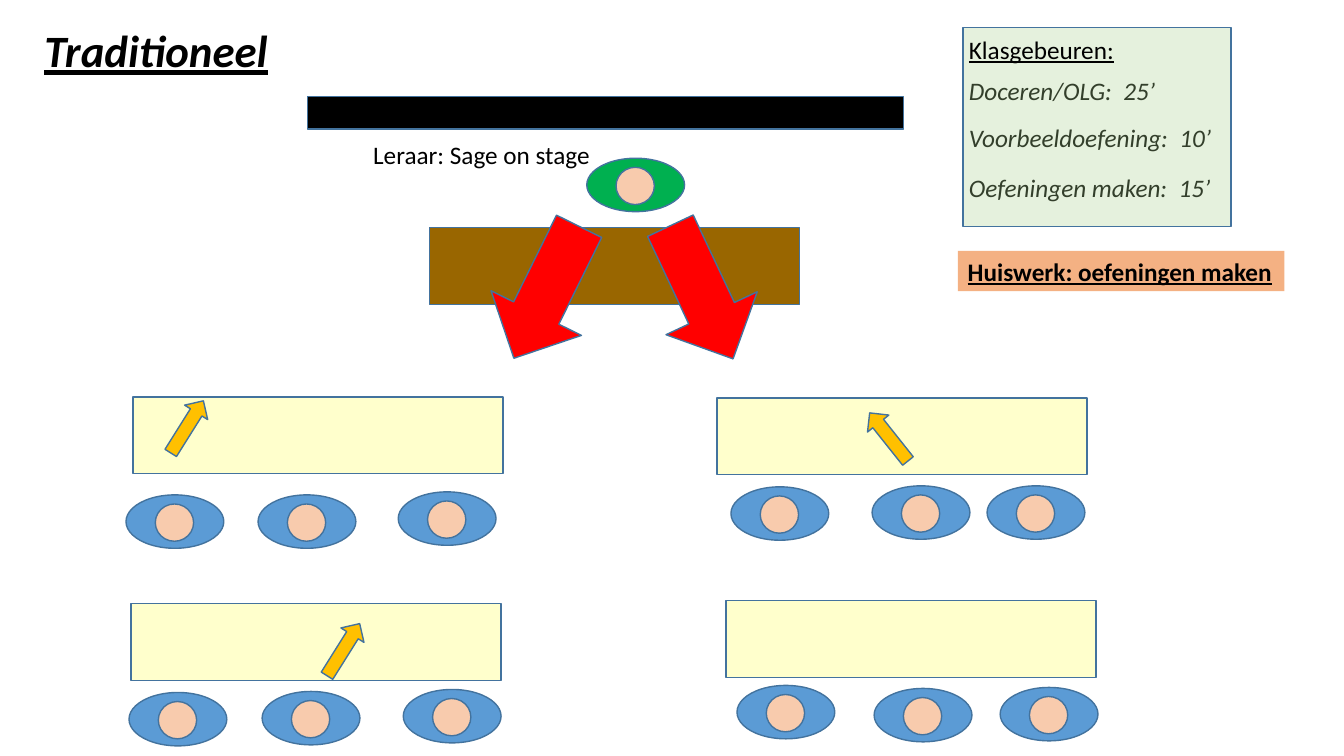
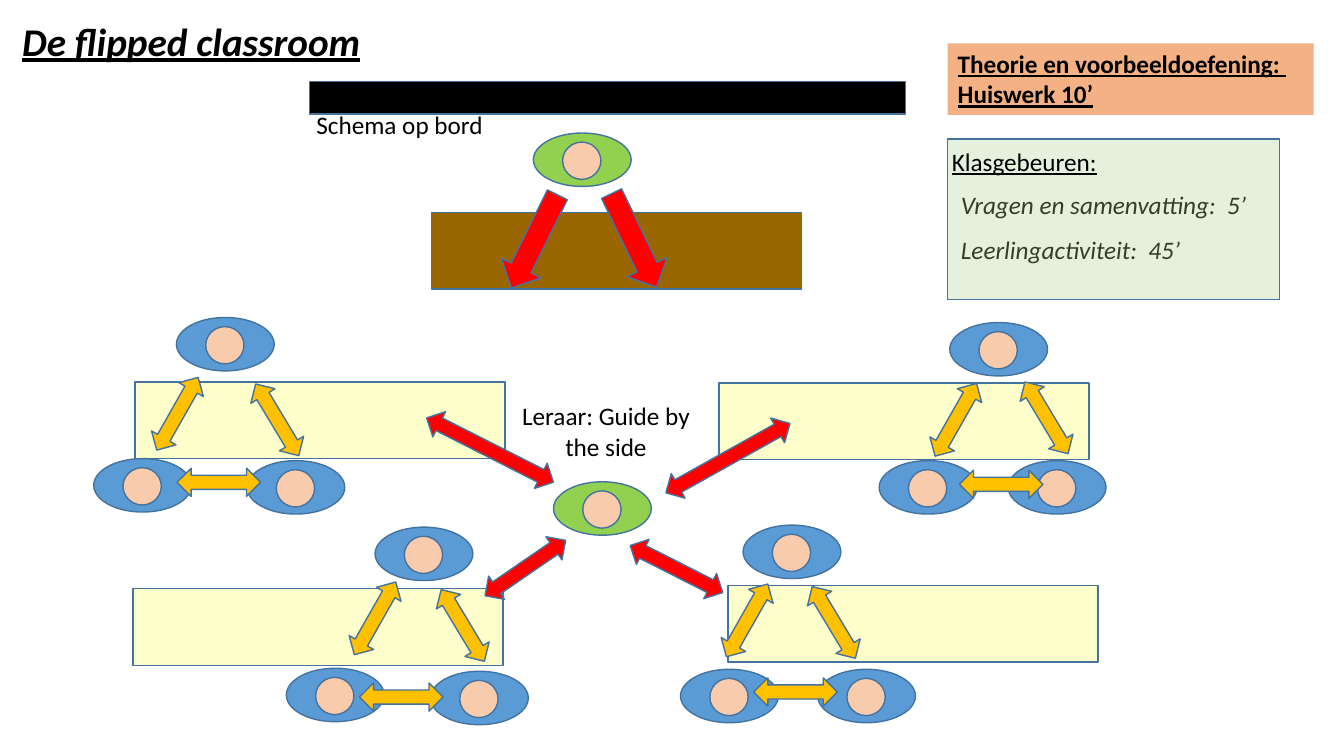
from lxml.etree import SubElement
from pptx import Presentation
from pptx.dml.color import RGBColor
from pptx.enum.shapes import MSO_SHAPE
from pptx.enum.text import MSO_ANCHOR, MSO_AUTO_SIZE, PP_ALIGN
from pptx.oxml.ns import qn
from pptx.util import Inches, Pt

FONT = "Calibri"
BLACK = "000000"
OUTLINE = "43739E"
DESK = "996600"
TABLE = "FFFFCC"
PUPIL = "5B9BD5"
HEAD = "F8CBAD"
RED = "FF0000"
AMBER = "FFC000"
NOTICE = "F4B183"
PANEL = "E5F1DD"
PANEL_ITEM = "333F2B"

PERSON_SIZE = (0.97, 0.53)
TABLE_SIZE = (3.67, 0.76)
TABLE_SPOTS = [(1.32, 3.94), (1.3, 5.99), (7.11, 3.95), (7.2, 5.96)]
TRIAD_TURNS = [29.6, 329, 90]


def color(hex_text):
    return RGBColor.from_string(hex_text)


def place(part, box):
    part.left, part.top, part.width, part.height = [Inches(n) for n in box]


def paint(part, fill, line=OUTLINE):
    part.fill.solid()
    part.fill.fore_color.rgb = color(fill)
    if line:
        part.line.color.rgb = color(line)
        part.line.width = Pt(1)
    else:
        part.line.fill.background()


def add_part(slide, preset, box, fill, line=OUTLINE, turn=0):
    part = slide.shapes.add_shape(preset, *[Inches(n) for n in box])
    part.shadow.inherit = False
    part.rotation = turn
    paint(part, fill, line)
    return part


def style_paragraph(paragraph, size=18, ink=BLACK, bold=False, italic=False,
                    underline=False, align=PP_ALIGN.LEFT):
    paragraph.alignment = align
    for run in paragraph.runs:
        run.font.name = FONT
        run.font.size = Pt(size)
        run.font.color.rgb = color(ink)
        run.font.bold = bold
        run.font.italic = italic
        run.font.underline = underline


def add_title(slide, text, box, size):
    title = slide.shapes.title
    place(title, box)
    frame = title.text_frame
    frame.text = text
    frame.word_wrap = False
    frame.auto_size = MSO_AUTO_SIZE.NONE
    frame.vertical_anchor = MSO_ANCHOR.TOP
    style_paragraph(frame.paragraphs[0], size, bold=True, italic=True, underline=True)


def add_label(slide, text, box, align=PP_ALIGN.CENTER):
    frame = slide.shapes.add_textbox(*[Inches(n) for n in box]).text_frame
    frame.text = text
    frame.word_wrap = True
    frame.vertical_anchor = MSO_ANCHOR.MIDDLE
    style_paragraph(frame.paragraphs[0], align=align)


def add_notice(slide, text, box):
    frame = add_part(slide, MSO_SHAPE.RECTANGLE, box, NOTICE, None).text_frame
    frame.text = text
    frame.word_wrap = True
    frame.margin_right = 0
    frame.vertical_anchor = MSO_ANCHOR.TOP
    style_paragraph(frame.paragraphs[0], bold=True, underline=True)


def add_agenda(slide, items, box, gaps, inset, indent):
    agenda = slide.placeholders[1]
    place(agenda, box)
    paint(agenda, PANEL)
    frame = agenda.text_frame
    frame.text = "\n".join(["Klasgebeuren:", *items])
    frame.word_wrap = True
    frame.auto_size = MSO_AUTO_SIZE.NONE
    frame.vertical_anchor = MSO_ANCHOR.TOP
    frame.margin_left = Inches(inset)
    frame.margin_right = 0
    frame.margin_top = Inches(0.07)
    for index, (paragraph, gap) in enumerate(zip(frame.paragraphs, [0, *gaps])):
        paragraph.space_before = Pt(gap)
        is_item = index > 0
        style_paragraph(paragraph, ink=PANEL_ITEM if is_item else BLACK,
                        italic=is_item, underline=not is_item)
        properties = paragraph._p.get_or_add_pPr()
        properties.set("marL", str(Inches(indent) if is_item else 0))
        properties.set("indent", "0")
        SubElement(properties, qn("a:buNone"))


def add_person(slide, left, top, body=PUPIL):
    add_part(slide, MSO_SHAPE.OVAL, (left, top, *PERSON_SIZE), body)
    add_part(slide, MSO_SHAPE.OVAL, (left + 0.29, top + 0.09, 0.38, 0.37), HEAD)


def add_arrows(slide, preset, fill, arrows):
    for *box, turn in arrows:
        add_part(slide, preset, box, fill, turn=turn)


def add_room(slide, left, top):
    furniture = [((3.05, 0.96), (5.91, 0.32), BLACK), ((4.26, 2.26), TABLE_SIZE, DESK)]
    furniture += [(spot, TABLE_SIZE, TABLE) for spot in TABLE_SPOTS]
    for (x, y), size, fill in furniture:
        add_part(slide, MSO_SHAPE.RECTANGLE, (left + x, top + y, *size), fill)


def add_triad(slide, left, top, partners, arrows):
    for x, y in [(0, 0), *partners]:
        add_person(slide, left + x, top + y)
    add_arrows(slide, MSO_SHAPE.UP_DOWN_ARROW, AMBER,
               [(left + x, top + y, 0.28, 0.83, turn)
                for (x, y), turn in zip(arrows, TRIAD_TURNS)])


def build_traditional(slide):
    add_title(slide, "Traditioneel", (0.34, 0.18, 2.44, 0.64), 32)
    add_room(slide, 0, 0)
    add_person(slide, 5.82, 1.57, "00B050")
    for seat in [(1.25, 4.91), (2.56, 4.91), (3.95, 4.88),
                 (7.25, 4.83), (8.65, 4.82), (9.79, 4.82),
                 (1.28, 6.87), (2.6, 6.86), (4, 6.84),
                 (7.31, 6.8), (8.67, 6.83), (9.92, 6.82)]:
        add_person(slide, *seat)
    add_label(slide, "Leraar: Sage on stage", (3.35, 1.3, 2.85, 0.47))
    add_arrows(slide, MSO_SHAPE.DOWN_ARROW, RED,
               [(4.92, 2.17, 1, 1.46, 26.3), (6.46, 2.17, 1, 1.46, 334.8)])
    add_arrows(slide, MSO_SHAPE.DOWN_ARROW, AMBER,
               [(1.72, 3.93, 0.27, 0.61, 212.1),
                (8.68, 4.03, 0.27, 0.61, 141.5),
                (3.27, 6.14, 0.27, 0.61, 212.1)])
    add_notice(slide, "Huiswerk: oefeningen maken", (9.5, 2.49, 3.24, 0.4))
    add_agenda(slide, ["Doceren/OLG:  25’", "Voorbeeldoefening:  10’",
                       "Oefeningen maken:  15’"],
               (9.55, 0.27, 2.66, 1.98), [7.5, 12.5, 14], 0.06, 0)


def build_flipped(slide):
    add_title(slide, "De flipped classroom", (0.12, 0.12, 3.59, 0.57), 28)
    add_room(slide, 0.02, -0.15)
    add_person(slide, 5.29, 1.32, "92D050")
    add_arrows(slide, MSO_SHAPE.DOWN_ARROW, RED,
               [(5.08, 1.88, 0.44, 1.03, 26.3), (6.07, 1.87, 0.44, 1.03, 334.2)])
    add_label(slide, "Schema op bord", (3.04, 1.03, 2, 0.4), PP_ALIGN.LEFT)
    add_notice(slide, "Theorie en voorbeeldoefening:  Huiswerk 10’",
               (9.4, 0.43, 3.63, 0.71))
    for triad in [
        (1.75, 3.15, [(-0.82, 1.4), (0.7, 1.42)],
         [(-0.13, 0.54), (0.86, 0.6), (0.28, 1.22)]),
        (9.42, 3.2, [(-0.7, 1.37), (0.58, 1.37)],
         [(-0.08, 0.55), (0.82, 0.53), (0.37, 1.19)]),
        (3.72, 5.23, [(-0.88, 1.4), (0.55, 1.43)],
         [(-0.14, 0.49), (0.73, 0.56), (0.12, 1.27)]),
        (7.37, 5.21, [(-0.62, 1.43), (0.74, 1.43)],
         [(-0.1, 0.53), (0.76, 0.55), (0.38, 1.24)]),
    ]:
        add_triad(slide, *triad)
    add_label(slide, "Leraar: Guide by the side", (5, 4.04, 2.02, 0.47))
    add_person(slide, 5.49, 4.78, "92D050")
    add_arrows(slide, MSO_SHAPE.UP_DOWN_ARROW, RED,
               [(4.72, 3.76, 0.28, 1.41, 296.9), (7.08, 3.84, 0.28, 1.41, 240.8),
                (5.07, 5.15, 0.28, 0.97, 235.5), (6.57, 5.13, 0.28, 1.03, 296.9)])
    add_agenda(slide, ["Vragen en samenvatting:  5’", "Leerlingactiviteit:  45’"],
               (9.4, 1.38, 3.29, 1.59), [9, 11], 0.04, 0.09)


def main():
    deck = Presentation()
    deck.slide_width = Inches(13.33)
    deck.slide_height = Inches(7.5)
    for build in (build_traditional, build_flipped):
        build(deck.slides.add_slide(deck.slide_layouts[1]))
    deck.save("out.pptx")


if __name__ == "__main__":
    main()
